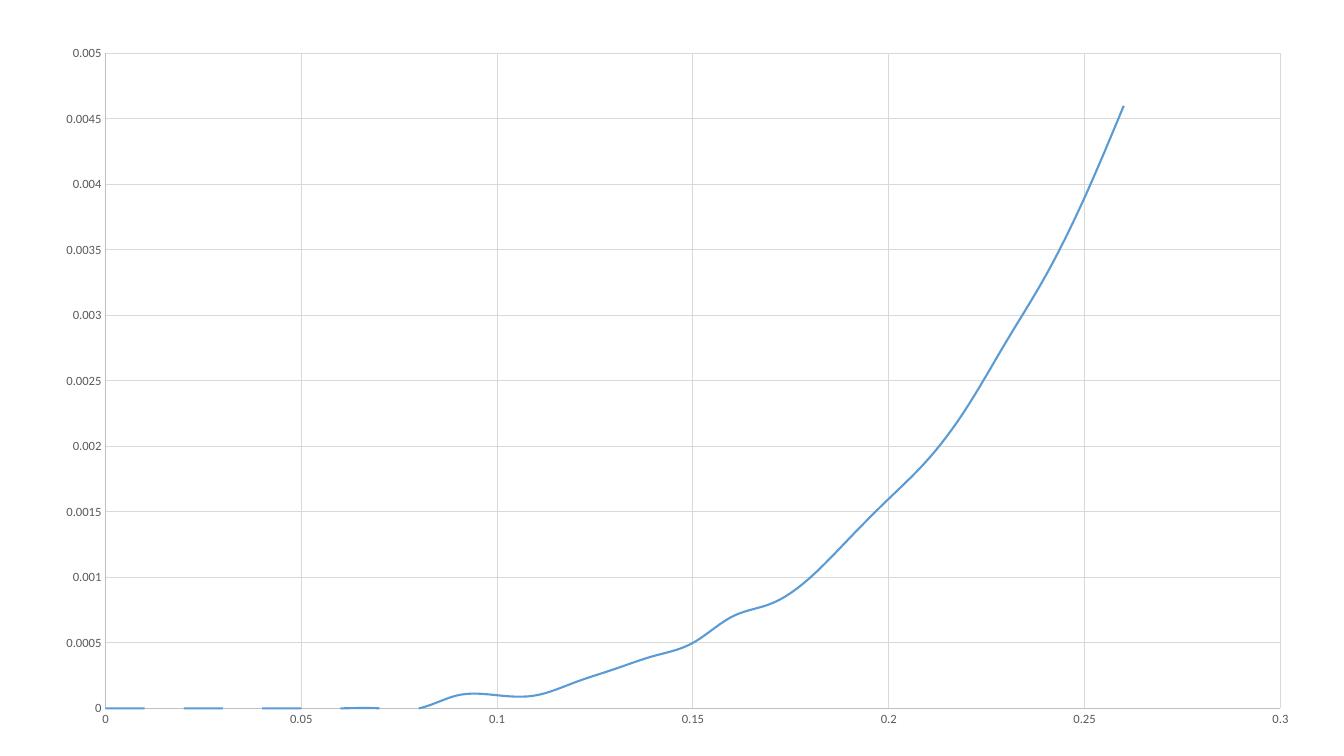
from lxml import etree
from pptx import Presentation
from pptx.chart.data import XyChartData
from pptx.dml.color import RGBColor
from pptx.enum.chart import XL_CHART_TYPE, XL_MARKER_STYLE, XL_TICK_LABEL_POSITION, XL_TICK_MARK
from pptx.util import Pt

SCATTER = XL_CHART_TYPE.XY_SCATTER_SMOOTH_NO_MARKERS
NO_MARKER = XL_MARKER_STYLE.NONE
NEXT_TO_AXIS = XL_TICK_LABEL_POSITION.NEXT_TO_AXIS
NO_TICK = XL_TICK_MARK.NONE
C = "{http://schemas.openxmlformats.org/drawingml/2006/chart}"
PX = 9071  # EMU per pixel at 100.8 px to the inch


def px(n):
    return n * PX


def style_line(line, color, width):
    line.color.rgb = RGBColor.from_string(color)
    line.width = Pt(width)


prs = Presentation()
prs.slide_width, prs.slide_height = px(1344), px(756)
slide = prs.slides.add_slide(prs.slide_layouts[6])

# Data: fourth power of x
data = XyChartData()
curve = data.add_series("Series 1")
for i in range(27):
    x = i / 100
    curve.add_data_point(x, round(x ** 4, 4))

# Chart
chart = slide.shapes.add_chart(SCATTER, px(41), px(31), px(1273), px(710), data).chart
chart.has_legend = False
chart.has_title = False
chart.font.name = "Calibri"
chart.font.size = Pt(10)
chart.font.color.rgb = RGBColor.from_string("000000")

# Axes
for axis, top, step in ((chart.category_axis, 0.3, 0.05),
                        (chart.value_axis, 0.005, 0.0005)):
    axis.minimum_scale = 0
    axis.maximum_scale = top
    axis.major_unit = step
    axis.has_major_gridlines = True
    axis.major_tick_mark = NO_TICK
    axis.minor_tick_mark = NO_TICK
    axis.tick_label_position = NEXT_TO_AXIS
    labels = axis.tick_labels
    labels.number_format = "General"
    labels.number_format_is_linked = False
    labels.font.name = "Calibri"
    labels.font.size = Pt(9)
    labels.font.color.rgb = RGBColor.from_string("595959")
    style_line(axis.format.line, "BFBFBF", 0.75)
    style_line(axis.major_gridlines.format.line, "D9D9D9", 0.75)

# Smooth curve
plot = chart.plots[0]
plot.vary_by_categories = False
series = plot.series[0]
series.marker.style = NO_MARKER
style_line(series.format.line, "5B9BD5", 1.5)
series._element.find(f"{C}smooth").set("val", "1")

# Fixed inner plot area, as fractions of the chart frame
plot_area = plot._element.getparent()
for old in plot_area.findall(f"{C}layout"):
    plot_area.remove(old)
layout = etree.Element(f"{C}layout")
plot_area.insert(0, layout)
manual = etree.SubElement(layout, f"{C}manualLayout")
for tag, val in (("layoutTarget", "inner"), ("xMode", "edge"), ("yMode", "edge"),
                 ("x", 64.5 / 1273), ("y", 22.5 / 710),
                 ("w", 1175 / 1273), ("h", 655 / 710)):
    etree.SubElement(manual, f"{C}{tag}").set("val", str(val))

prs.save("out.pptx")
